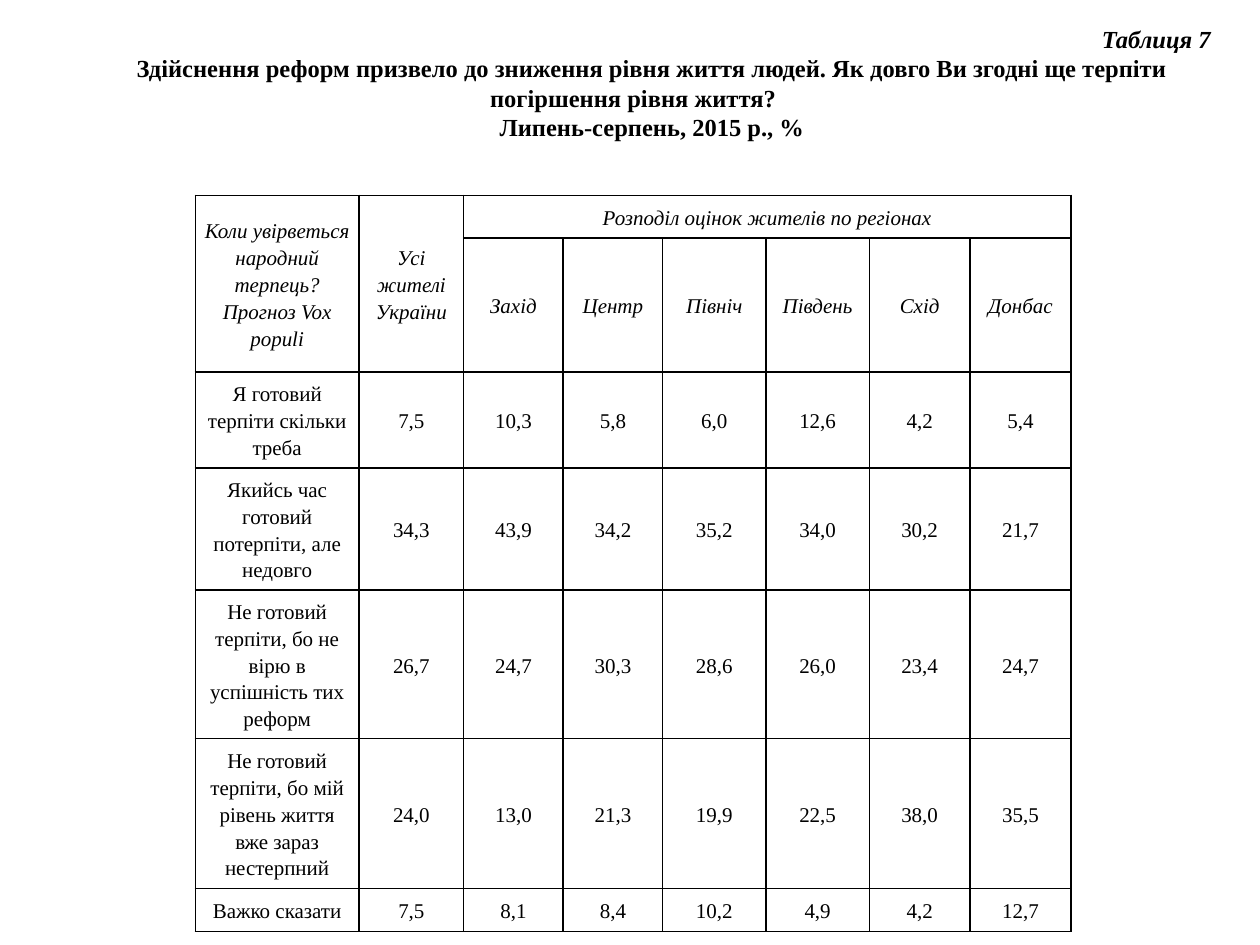
from lxml.etree import SubElement as Sub
from pptx import Presentation
from pptx.dml.color import RGBColor as Rgb
from pptx.enum.text import MSO_ANCHOR as Anchor, MSO_AUTO_SIZE as Auto, PP_ALIGN as Align
from pptx.oxml.ns import qn
from pptx.util import Inches as In, Pt

FONT = "Times New Roman"
HUES = {"ink": "000000"}
COLS = [1.3, 0.83, 0.79, 0.79, 0.82, 0.82, 0.8, 0.8]
ROWS = [0.34, 1.06, 0.76, 0.97, 1.18, 1.19, 0.34]
TITLE = [
    "Таблиця 7",
    "Здійснення реформ призвело до зниження рівня життя людей. "
    "Як довго Ви згодні ще терпіти погіршення рівня життя?",
    "Липень-серпень, 2015 р., %",
]
HEAD = ["Коли увірветься народний терпець? Прогноз Vox populi",
        "Усі жителі України", "Розподіл оцінок жителів по регіонах"]
AREAS = ["Захід", "Центр", "Північ", "Південь", "Схід", "Донбас"]
DATA = [
    ("Я готовий терпіти скільки треба", "7,5 10,3 5,8 6,0 12,6 4,2 5,4"),
    ("Якийсь час готовий потерпіти, але недовго", "34,3 43,9 34,2 35,2 34,0 30,2 21,7"),
    ("Не готовий терпіти, бо не вірю в успішність тих реформ",
     "26,7 24,7 30,3 28,6 26,0 23,4 24,7"),
    ("Не готовий терпіти, бо мій рівень життя вже зараз нестерпний",
     "24,0 13,0 21,3 19,9 22,5 38,0 35,5"),
    ("Важко сказати", "7,5 8,1 8,4 10,2 4,9 4,2 12,7"),
]


def add_run(para, text, size, bold=False, slant=False):
    run = para.add_run()
    run.text = text
    font = run.font
    font.name, font.size, font.bold, font.italic = FONT, Pt(size), bold, slant
    font.color.rgb = Rgb.from_string(HUES["ink"])


def add_title(slide):
    box = slide.shapes.title
    box.left, box.top, box.width, box.height = In(0.34), In(0.13), In(9.37), In(1.28)
    frame = box.text_frame
    frame.word_wrap, frame.auto_size = True, Auto.NONE
    frame.vertical_anchor = Anchor.MIDDLE
    frame.margin_bottom = In(0.28)
    for num, text in enumerate(TITLE):
        para = frame.add_paragraph() if num else frame.paragraphs[0]
        para.alignment = Align.CENTER if num else Align.RIGHT
        para._p.get_or_add_pPr().set("indent", str(In(0.3)))
        add_run(para, text, 14, bold=True, slant=not num)


def rule_cell(cell):
    props = cell._tc.get_or_add_tcPr()
    for side in "LRTB":
        line = Sub(props, qn(f"a:ln{side}"), w=str(Pt(1)))
        Sub(Sub(line, qn("a:solidFill")), qn("a:srgbClr"), val=HUES["ink"])
    cell.fill.background()


def fill_cell(cell, text, slant):
    cell.vertical_anchor = Anchor.MIDDLE
    cell.margin_left = cell.margin_right = In(0.07)
    cell.margin_top = cell.margin_bottom = 0
    para = cell.text_frame.paragraphs[0]
    para.alignment, para.line_spacing = Align.CENTER, 1.15
    add_run(para, text, 12, slant=slant)


def add_grid(slide):
    grid = slide.shapes.add_table(len(ROWS), len(COLS), In(1.55), In(1.55),
                                  In(sum(COLS)), In(sum(ROWS))).table
    grid.first_row = grid.horz_banding = False
    for col, wide in zip(grid.columns, COLS):
        col.width = In(wide)
    for row, high in zip(grid.rows, ROWS):
        row.height = In(high)
    for cell in grid.iter_cells():
        rule_cell(cell)
    for col in range(2):
        grid.cell(0, col).merge(grid.cell(1, col))
    grid.cell(0, 2).merge(grid.cell(0, len(COLS) - 1))
    lines = [HEAD, [""] * 2 + AREAS] + [[name] + nums.split() for name, nums in DATA]
    for row, line in enumerate(lines):
        for col, text in enumerate(line):
            if text:
                fill_cell(grid.cell(row, col), text, row < 2)


def main():
    """Build the survey table slide and save it."""
    deck = Presentation()
    deck.slide_width, deck.slide_height = In(10), In(7.5)
    slide = deck.slides.add_slide(deck.slide_layouts[5])
    add_title(slide)
    add_grid(slide)
    deck.save("out.pptx")


if __name__ == "__main__":
    main()
